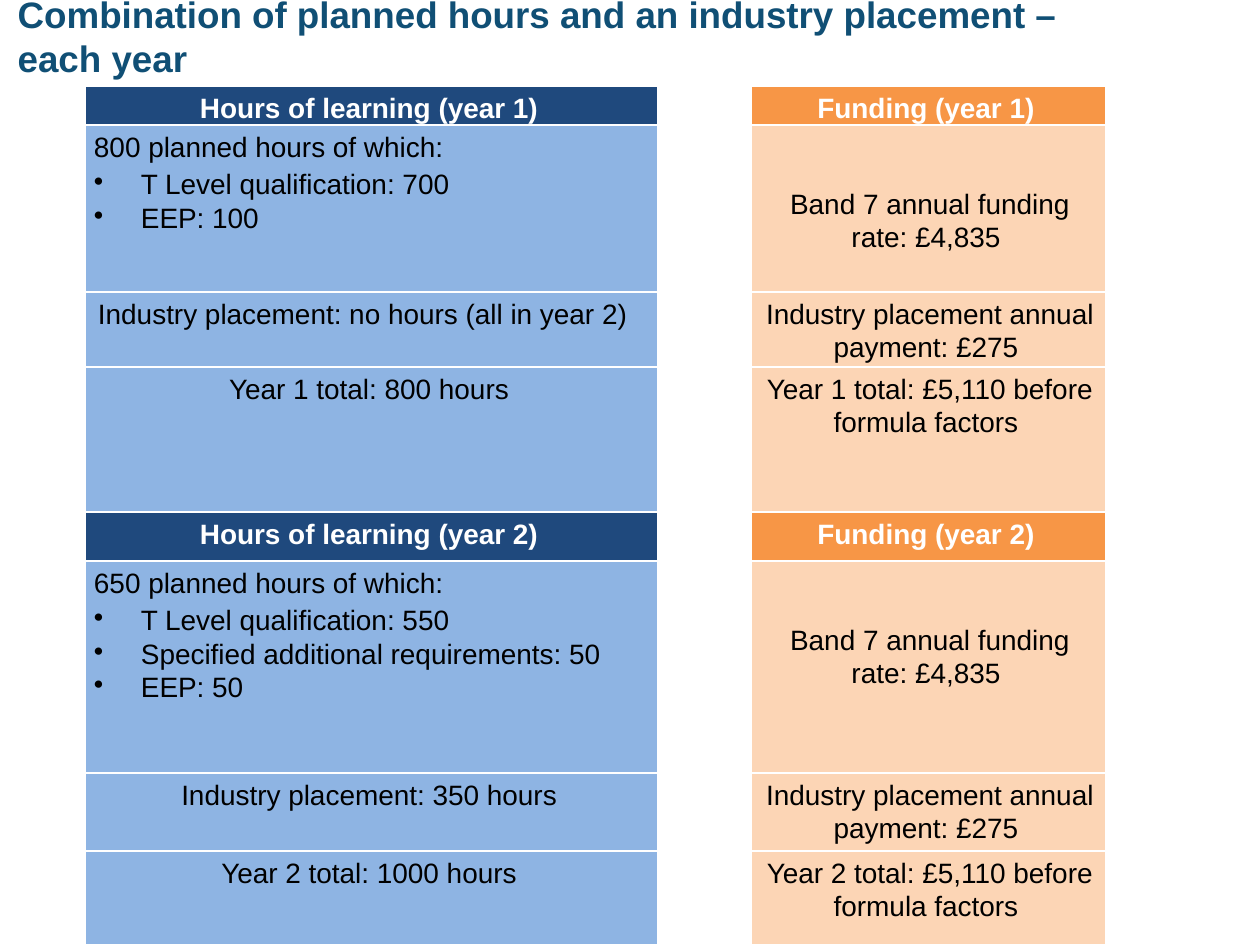
from lxml import etree
from pptx import Presentation
from pptx.dml.color import RGBColor
from pptx.enum.text import MSO_ANCHOR, MSO_AUTO_SIZE, PP_ALIGN
from pptx.oxml.ns import qn
from pptx.util import Pt

PX = 914400 // 126
LEFT, CENTER = PP_ALIGN.LEFT, PP_ALIGN.CENTER
TOP, MIDDLE = MSO_ANCHOR.TOP, MSO_ANCHOR.MIDDLE
TEAL = RGBColor(0x10, 0x4F, 0x75)
NAVY = RGBColor(0x1F, 0x49, 0x7D)
BLUE = RGBColor(0x8E, 0xB4, 0xE3)
ORANGE = RGBColor(0xF7, 0x96, 0x46)
PEACH = RGBColor(0xFC, 0xD5, 0xB5)
WHITE = RGBColor(0xFF, 0xFF, 0xFF)
BLACK = RGBColor(0, 0, 0)


def style(para, size, color, bold, align):
    para.font.name = "Arial"
    para.font.size = Pt(size)
    para.font.color.rgb = color
    para.font.bold = bold
    para.alignment = align


def fill_cell(cell, lines, fill, color=BLACK, bold=False, align=CENTER, top=5):
    cell.fill.solid()
    cell.fill.fore_color.rgb = fill
    cell.margin_left, cell.margin_right = 9 * PX, 6 * PX
    cell.margin_top, cell.margin_bottom = top * PX, 0
    cell.vertical_anchor = TOP
    frame = cell.text_frame
    frame.text = "\n".join(lines)
    for i, para in enumerate(frame.paragraphs):
        style(para, 16, color, bold, align)
        para.line_spacing = 1.07
        if i:
            props = para._p.get_or_add_pPr()
            props.set("marL", str(47 * PX))
            props.set("indent", str(-47 * PX))
            etree.SubElement(props, qn("a:buChar")).set("char", "•")
        elif len(lines) > 1:
            para.space_after = Pt(2.5)


prs = Presentation()
prs.slide_width, prs.slide_height = 1260 * PX, 945 * PX
slide = prs.slides.add_slide(prs.slide_layouts[5])

title = slide.shapes.title
title.left, title.top, title.width, title.height = 5 * PX, -4 * PX, 1260 * PX, 80 * PX
frame = title.text_frame
frame.text = "Combination of planned hours and an industry placement –\veach year"
frame.auto_size = MSO_AUTO_SIZE.NONE
frame.vertical_anchor = MIDDLE
style(frame.paragraphs[0], 21, TEAL, True, LEFT)

years = [
    (1, 86, [39, 167, 75, 145],
     ["800 planned hours of which:", "T Level qualification: 700", "EEP: 100"],
     "Industry placement: no hours (all in year 2)", LEFT, "800"),
    (2, 512, [49, 212, 78, 94],
     ["650 planned hours of which:", "T Level qualification: 550",
      "Specified additional requirements: 50", "EEP: 50"],
     "Industry placement: 350 hours ", CENTER, "1000"),
]
for year, top, rows, plan, place, align, total in years:
    table = slide.shapes.add_table(
        4, 3, 85 * PX, top * PX, 1021 * PX, sum(rows) * PX).table
    for col, width in zip(table.columns, [573, 93, 355]):
        col.width = width * PX
    for row, height in zip(table.rows, rows):
        row.height = height * PX
    gap = table.cell(0, 1)
    gap.merge(table.cell(3, 1))
    gap.fill.solid()
    gap.fill.fore_color.rgb = WHITE

    fill_cell(table.cell(0, 0), [f"Hours of learning (year {year}) "], NAVY, WHITE, True)
    fill_cell(table.cell(1, 0), plan, BLUE, align=LEFT)
    fill_cell(table.cell(2, 0), [place], BLUE, align=align)
    if align == LEFT:
        table.cell(2, 0).margin_left = 13 * PX
    fill_cell(table.cell(3, 0), [f"Year {year} total: {total} hours "], BLUE)

    fill_cell(table.cell(0, 2), [f"Funding (year {year}) "], ORANGE, WHITE, True)
    fill_cell(table.cell(1, 2), ["Band 7 annual funding rate: £4,835 "], PEACH, top=62)
    fill_cell(table.cell(2, 2), ["Industry placement annual payment: £275 "], PEACH)
    fill_cell(table.cell(3, 2), [f"Year {year} total: £5,110 before formula factors "], PEACH)

prs.save("out.pptx")
